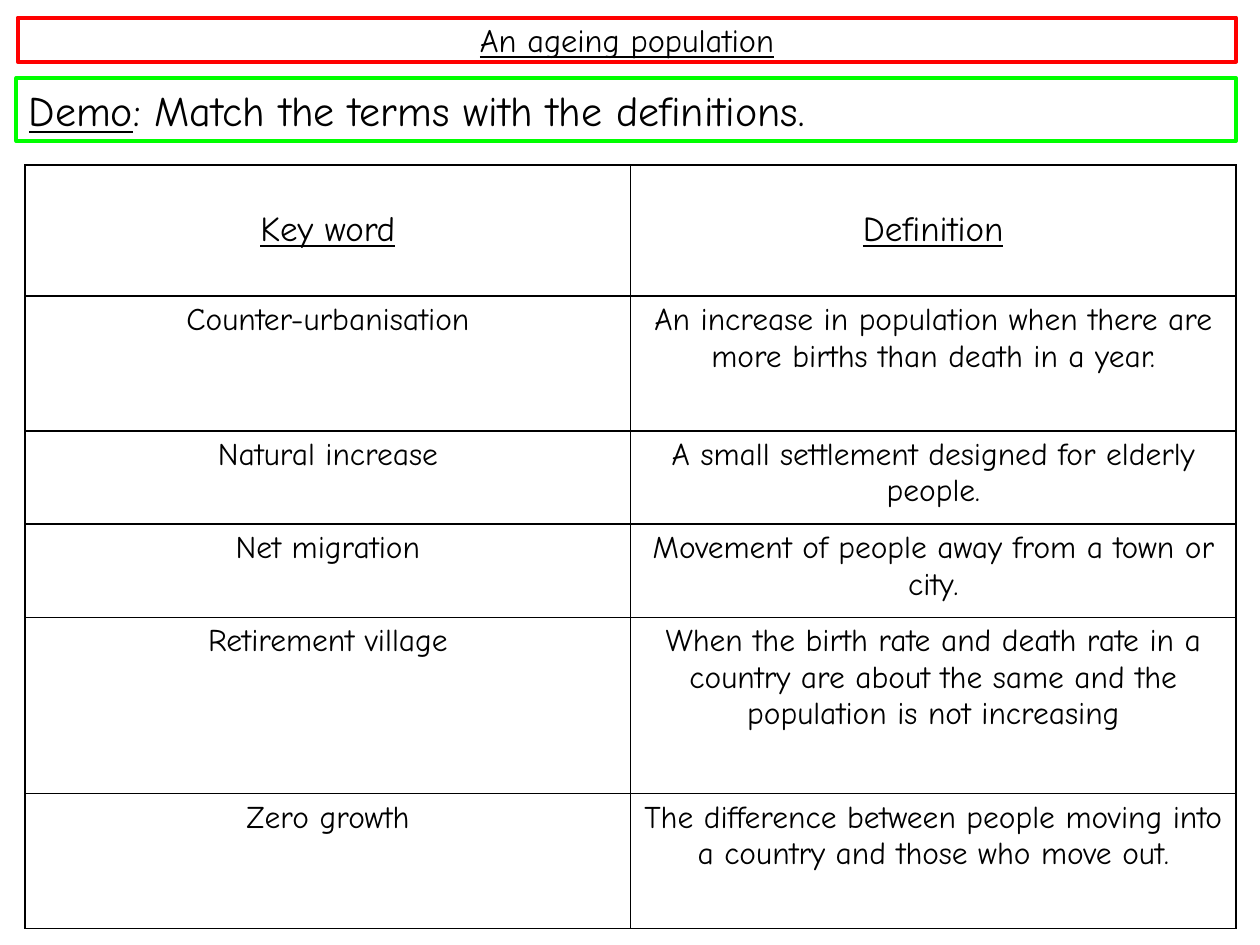
from lxml import etree
from pptx import Presentation
from pptx.dml.color import RGBColor
from pptx.enum.shapes import MSO_SHAPE
from pptx.enum.text import MSO_ANCHOR, MSO_AUTO_SIZE, PP_ALIGN
from pptx.oxml.ns import qn
from pptx.util import Inches, Pt

CENTER, LEFT = PP_ALIGN.CENTER, PP_ALIGN.LEFT
TOP, MIDDLE = MSO_ANCHOR.TOP, MSO_ANCHOR.MIDDLE

# Content
TITLE = "An ageing population"
TASK = [("Demo", True), (": Match the terms with the definitions.", False)]
HEADER = ("Key word", "Definition")
TERMS = [
    ("Counter-urbanisation", "An increase in population when there are more births than death in a year."),
    ("Natural increase", "A small settlement designed for elderly people."),
    ("Net migration", "Movement of people away from a town or city."),
    ("Retirement village", "When the birth rate and death rate in a country are about the same "
                           "and the population is not increasing"),
    ("Zero growth", "The difference between people moving into a country and those who move out."),
]

# Format and layout, in inches and points
FONT = "Comic Neue"
COLORS = {"ink": "000000", "title": "FF0000", "task": "00FF00"}
TITLE_AREA = (0.14, 0.14, 9.67, 0.35)
TASK_AREA = (0.13, 0.62, 9.68, 0.5)
TABLE_LEFT, TABLE_TOP, TABLE_WIDTH = 0.2, 1.31, 9.61
ROW_HEIGHTS = [1.04, 1.07, 0.74, 0.74, 1.4, 1.07]


def write(para, spans, size, align):
    """Fill a paragraph with (text, underlined) spans."""
    para.alignment = align
    for text, underlined in spans:
        span = para.add_run()
        span.text = text
        values = {"name": FONT, "size": Pt(size), "bold": False, "underline": underlined}
        for name, value in values.items():
            setattr(span.font, name, value)
        span.font.color.rgb = RGBColor.from_string(COLORS["ink"])


def frame_box(box, area, color, anchor):
    """Place an outlined box and return its text frame."""
    for name, value in zip(("left", "top", "width", "height"), area):
        setattr(box, name, Inches(value))
    box.fill.background()
    box.line.color.rgb = RGBColor.from_string(COLORS[color])
    box.line.width = Pt(2.25)
    frame = box.text_frame
    frame.word_wrap = True
    frame.auto_size = MSO_AUTO_SIZE.NONE
    frame.vertical_anchor = anchor
    return frame


def add_borders(cell):
    properties = cell._tc.get_or_add_tcPr()
    for side in ("lnL", "lnR", "lnT", "lnB"):
        line = etree.SubElement(properties, qn("a:" + side), w=str(Pt(1)))
        fill = etree.SubElement(line, qn("a:solidFill"))
        etree.SubElement(fill, qn("a:srgbClr"), val=COLORS["ink"])


deck = Presentation()
deck.slide_width, deck.slide_height = Inches(10), Inches(7.5)
page = deck.slides.add_slide(deck.slide_layouts[5])

# Matching table
rows = [HEADER] + TERMS
table = page.shapes.add_table(
    len(rows), len(HEADER), Inches(TABLE_LEFT), Inches(TABLE_TOP),
    Inches(TABLE_WIDTH), Inches(sum(ROW_HEIGHTS))).table
table.first_row = table.horz_banding = False
for row_index, (height, texts) in enumerate(zip(ROW_HEIGHTS, rows)):
    table.rows[row_index].height = Inches(height)
    is_header = row_index == 0
    for column_index, text in enumerate(texts):
        cell = table.cell(row_index, column_index)
        add_borders(cell)
        cell.fill.background()
        cell.vertical_anchor = MIDDLE if is_header else TOP
        write(cell.text_frame.paragraphs[0], [(text, is_header)], 20 if is_header else 18, CENTER)

# Title
frame = frame_box(page.shapes.title, TITLE_AREA, "title", MIDDLE)
write(frame.paragraphs[0], [(TITLE, True)], 18.5, CENTER)

# Task
task_box = page.shapes.add_shape(MSO_SHAPE.RECTANGLE, 0, 0, 0, 0)
task_box.shadow.inherit = False
frame = frame_box(task_box, TASK_AREA, "task", TOP)
write(frame.paragraphs[0], TASK, 24, LEFT)

deck.save("out.pptx")
